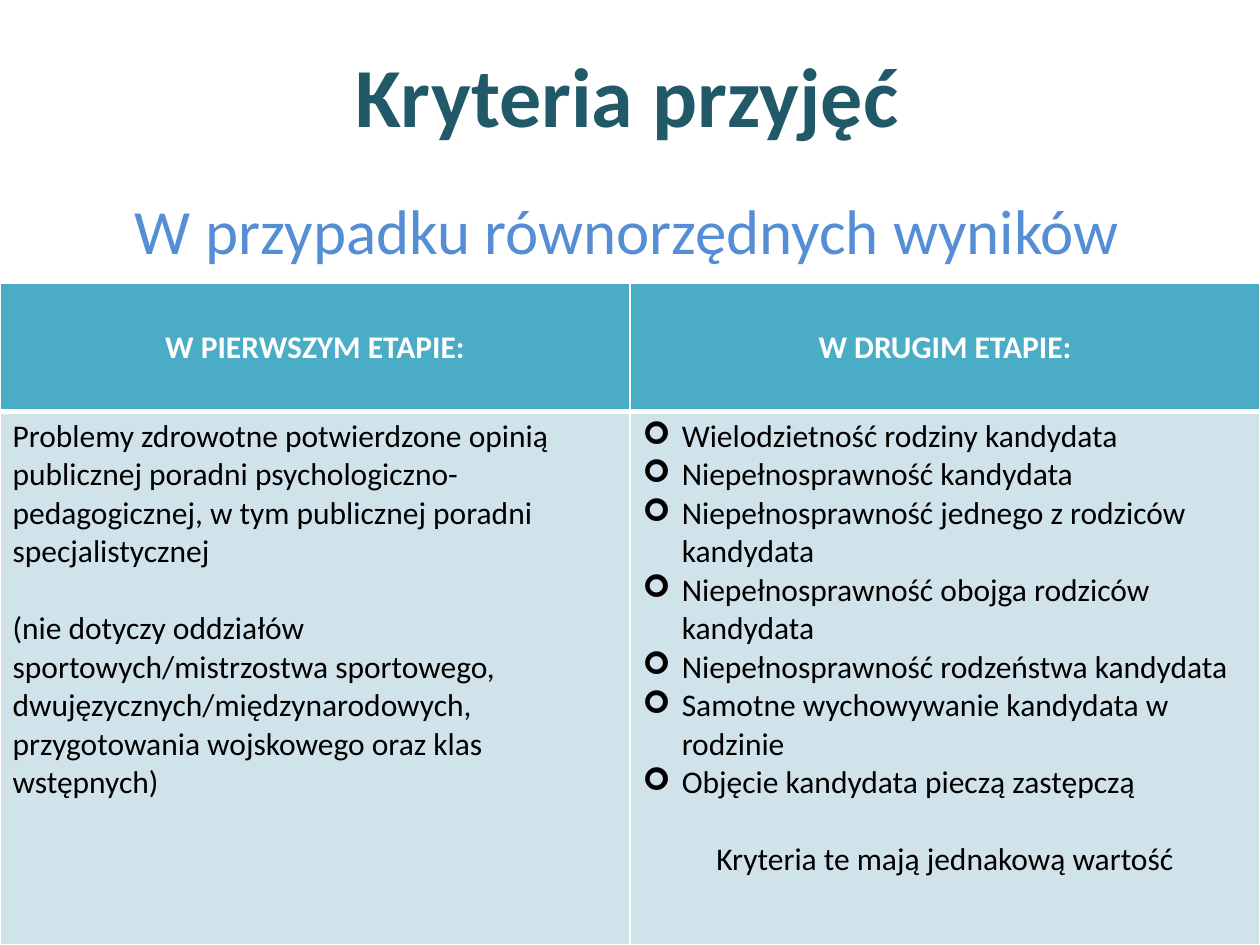
from lxml import etree
from pptx import Presentation
from pptx.dml.color import RGBColor
from pptx.enum.text import MSO_ANCHOR, MSO_AUTO_SIZE, PP_ALIGN
from pptx.oxml.ns import qn
from pptx.util import Cm, Pt

CENTER, LEFT = PP_ALIGN.CENTER, PP_ALIGN.LEFT
MIDDLE, TOP = MSO_ANCHOR.MIDDLE, MSO_ANCHOR.TOP
NO_FIT = MSO_AUTO_SIZE.NONE

WHITE = RGBColor(0xFF, 0xFF, 0xFF)
BLACK = RGBColor(0, 0, 0)
DARK_TEAL = RGBColor(0x21, 0x59, 0x68)
BLUE = RGBColor(0x55, 0x8E, 0xD5)
TEAL = RGBColor(0x4B, 0xAC, 0xC6)
PALE_TEAL = RGBColor(0xD0, 0xE3, 0xEA)

HEADERS = ["W PIERWSZYM ETAPIE:", "W DRUGIM ETAPIE:"]
HEALTH = [
    "Problemy zdrowotne potwierdzone opinią publicznej poradni "
    "psychologiczno-pedagogicznej, w tym publicznej poradni specjalistycznej",
    "(nie dotyczy oddziałów sportowych/mistrzostwa sportowego, "
    "dwujęzycznych/międzynarodowych, przygotowania wojskowego oraz klas wstępnych)",
]
CRITERIA = [
    "Wielodzietność rodziny kandydata",
    "Niepełnosprawność kandydata",
    "Niepełnosprawność jednego z rodziców kandydata",
    "Niepełnosprawność obojga rodziców kandydata",
    "Niepełnosprawność rodzeństwa kandydata",
    "Samotne wychowywanie kandydata w rodzinie",
    "Objęcie kandydata pieczą zastępczą",
]
NOTE = "Kryteria te mają jednakową wartość"
LINE_GAP = Pt(22)


def write(tf, lines, size, color, bold=False, align=LEFT):
    """Fill a text frame with one paragraph per line and return the paragraphs."""
    tf.text = "\n".join(lines)
    for p in tf.paragraphs:
        p.alignment = align
        font = p.runs[0].font
        for name, value in {"name": "Calibri", "size": Pt(size), "bold": bold}.items():
            setattr(font, name, value)
        font.color.rgb = color
    return tf.paragraphs


def add_borders(cell, widths):
    """Draw white borders, with widths in points by side."""
    tcPr = cell._tc.get_or_add_tcPr()
    for i, (side, width) in enumerate(widths.items()):
        ln = etree.Element(qn(f"a:ln{side}"), w=str(Pt(width)))
        fill = etree.SubElement(ln, qn("a:solidFill"))
        etree.SubElement(fill, qn("a:srgbClr"), val=str(WHITE))
        tcPr.insert(i, ln)


prs = Presentation()
prs.slide_width, prs.slide_height = Cm(25.4), Cm(19.05)
s = prs.slides.add_slide(prs.slide_layouts[5])

# Title and subtitle
title = s.shapes.title
title.left, title.top, title.width, title.height = Cm(6.86), Cm(0.74), Cm(11.58), Cm(2.31)
title.text_frame.word_wrap = False
title.text_frame.auto_size = NO_FIT
write(title.text_frame, ["Kryteria przyjęć"], 48, DARK_TEAL, True, CENTER)

subtitle = s.shapes.add_textbox(Cm(1.85), Cm(3.73), Cm(21.59), Cm(1.8))
subtitle.text_frame.word_wrap = True
write(subtitle.text_frame, ["W przypadku równorzędnych wyników"], 36, BLUE, align=CENTER)

# Criteria table
table = s.shapes.add_table(2, 2, 0, Cm(5.72), Cm(25.4), Cm(13.33)).table
for row, height in zip(table.rows, (Cm(2.57), Cm(10.76))):
    row.height = height

for col, header in enumerate(HEADERS):
    write(table.cell(0, col).text_frame, [header], 18, WHITE, True, CENTER)

health = write(table.cell(1, 0).text_frame, HEALTH, 18, BLACK)
health[-1].space_before = LINE_GAP

*criteria, note = write(table.cell(1, 1).text_frame, CRITERIA + [NOTE], 18, BLACK)
for p in criteria:
    pPr = p._p.get_or_add_pPr()
    pPr.set("marL", str(Cm(0.79)))
    pPr.set("indent", str(-Cm(0.79)))
    etree.SubElement(pPr, qn("a:buFont"), typeface="Wingdings")
    etree.SubElement(pPr, qn("a:buChar"), char="➢")
note.alignment = CENTER
note.space_before = LINE_GAP

row_formats = [
    (TEAL, MIDDLE, {"L": 1, "R": 1, "T": 1, "B": 3}),
    (PALE_TEAL, TOP, {"L": 1, "R": 1, "T": 3, "B": 1}),
]
for row, (color, anchor, widths) in zip(table.rows, row_formats):
    for cell in row.cells:
        cell.fill.solid()
        cell.fill.fore_color.rgb = color
        cell.vertical_anchor = anchor
        add_borders(cell, widths)

prs.save("out.pptx")
